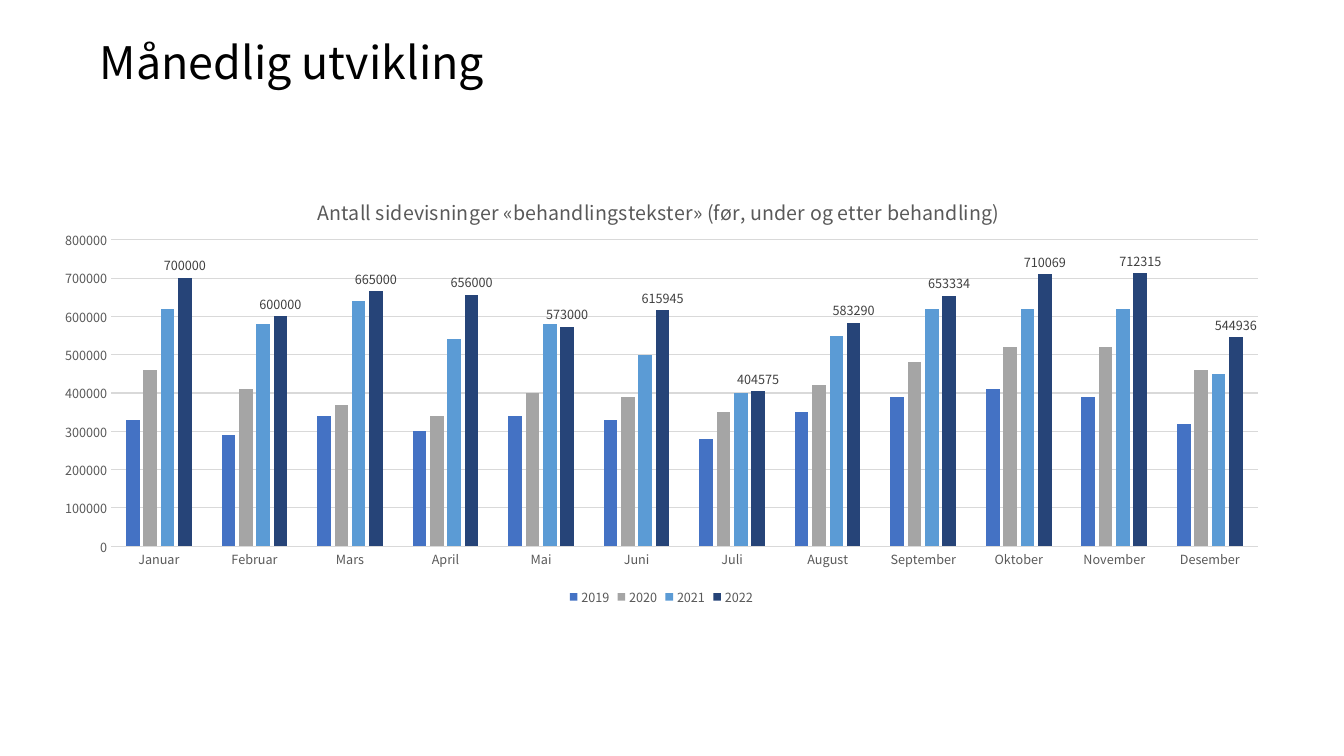
from pptx import Presentation
from pptx.chart.data import CategoryChartData
from pptx.dml.color import RGBColor
from pptx.enum.chart import XL_CHART_TYPE as ChartType
from pptx.enum.chart import XL_LABEL_POSITION as LabelPosition
from pptx.enum.chart import XL_LEGEND_POSITION as LegendPosition
from pptx.enum.chart import XL_TICK_MARK as TickMark
from pptx.enum.text import MSO_ANCHOR, PP_ALIGN
from pptx.oxml import parse_xml
from pptx.oxml.ns import nsdecls, qn
from pptx.util import Inches, Pt

FONT = "Noto Sans CJK TC"
BLACK = RGBColor(0x00, 0x00, 0x00)
WHITE = RGBColor(0xFF, 0xFF, 0xFF)
GREY = RGBColor(0x59, 0x59, 0x59)
LABEL_GREY = RGBColor(0x40, 0x40, 0x40)
LINE_GREY = RGBColor(0xD9, 0xD9, 0xD9)

TITLE = "Månedlig utvikling"
CHART_TITLE = "Antall sidevisninger «behandlingstekster» (før, under og etter behandling)"
MONTHS = ["Januar", "Februar", "Mars", "April", "Mai", "Juni", "Juli",
          "August", "September", "Oktober", "November", "Desember"]
YEARS = [
    ("2019", RGBColor(0x44, 0x72, 0xC4),
     [330000, 290000, 340000, 300000, 340000, 330000,
      280000, 350000, 390000, 410000, 390000, 320000]),
    ("2020", RGBColor(0xA5, 0xA5, 0xA5),
     [460000, 410000, 370000, 340000, 400000, 390000,
      350000, 420000, 480000, 520000, 520000, 460000]),
    ("2021", RGBColor(0x5B, 0x9B, 0xD5),
     [620000, 580000, 640000, 540000, 580000, 500000,
      400000, 550000, 620000, 620000, 620000, 450000]),
    ("2022", RGBColor(0x26, 0x44, 0x78),
     [700000, 600000, 665000, 656000, 573000, 615945,
      404575, 583290, 653334, 710069, 712315, 544936]),
]
TITLE_LAYOUT = {"xMode": "edge", "yMode": "edge", "x": 0.22, "y": 0.05}
PLOT_LAYOUT = {"layoutTarget": "inner", "xMode": "edge", "yMode": "edge",
               "x": 0.057, "y": 0.16, "w": 0.923, "h": 0.696}


def style_font(font, size, color):
    """Set typeface, size and colour of a font."""
    font.name = FONT
    font.size = Pt(size)
    font.bold = False
    font.color.rgb = color


def style_line(line):
    """Give a line the thin light grey look."""
    line.color.rgb = LINE_GREY
    line.width = Pt(0.75)


def make_layout(settings):
    """Build a manual chart layout element."""
    parts = "".join(f'<c:{key} val="{value}"/>' for key, value in settings.items())
    return parse_xml(f'<c:layout {nsdecls("c")}><c:manualLayout>{parts}'
                     '</c:manualLayout></c:layout>')


def add_title(slide):
    """Place and format the slide title."""
    title = slide.shapes.title
    title.left, title.top = Inches(0.89), Inches(0.29)
    title.width, title.height = Inches(10.6), Inches(0.64)
    title.fill.solid()
    title.fill.fore_color.rgb = WHITE
    frame = title.text_frame
    frame.text = TITLE
    frame.word_wrap = True
    frame.vertical_anchor = MSO_ANCHOR.MIDDLE
    paragraph = frame.paragraphs[0]
    paragraph.alignment = PP_ALIGN.LEFT
    style_font(paragraph.runs[0].font, 32, BLACK)


def format_axes(chart):
    """Format both axes and the gridlines."""
    for axis in (chart.category_axis, chart.value_axis):
        axis.major_tick_mark = axis.minor_tick_mark = TickMark.NONE
        style_font(axis.tick_labels.font, 9, GREY)
    style_line(chart.category_axis.format.line)
    value_axis = chart.value_axis
    value_axis.format.line.fill.background()
    value_axis.minimum_scale, value_axis.maximum_scale = 0, 800000
    value_axis.major_unit = 100000
    value_axis.has_major_gridlines = True
    style_line(value_axis.major_gridlines.format.line)


def format_series(plot):
    """Colour the columns and label the last year."""
    plot.gap_width, plot.overlap = 219, -27
    plot.vary_by_categories = False
    for series, (_, color, _) in zip(plot.series, YEARS):
        series.format.fill.solid()
        series.format.fill.fore_color.rgb = color
    labels = plot.series[-1].data_labels
    labels.show_value = True
    labels.position = LabelPosition.OUTSIDE_END
    style_font(labels.font, 9, LABEL_GREY)


def add_chart(slide):
    """Add the monthly column chart."""
    data = CategoryChartData(number_format="General")
    data.categories = MONTHS
    for year, _, values in YEARS:
        data.add_series(year, values)
    chart = slide.shapes.add_chart(
        ChartType.COLUMN_CLUSTERED, Inches(0.4), Inches(1.68),
        Inches(12.32), Inches(4.37), data).chart
    style_font(chart.font, 10, BLACK)

    chart.has_title = True
    frame = chart.chart_title.text_frame
    frame.text = CHART_TITLE
    style_font(frame.paragraphs[0].runs[0].font, 14, GREY)

    chart.has_legend = True
    chart.legend.position = LegendPosition.BOTTOM
    chart.legend.include_in_layout = False
    style_font(chart.legend.font, 9, GREY)

    format_axes(chart)
    format_series(chart.plots[0])

    chart_element = chart.element.find(qn("c:chart"))
    title = chart_element.find(qn("c:title"))
    plot_area = chart_element.find(qn("c:plotArea"))
    for parent, index, settings in ((title, 1, TITLE_LAYOUT), (plot_area, 0, PLOT_LAYOUT)):
        for layout in parent.findall(qn("c:layout")):
            parent.remove(layout)
        parent.insert(index, make_layout(settings))


def main():
    """Build and save the slide."""
    presentation = Presentation()
    presentation.slide_width, presentation.slide_height = Inches(13.33), Inches(7.5)
    slide = presentation.slides.add_slide(presentation.slide_layouts[5])
    add_title(slide)
    add_chart(slide)
    presentation.save("out.pptx")


if __name__ == "__main__":
    main()
